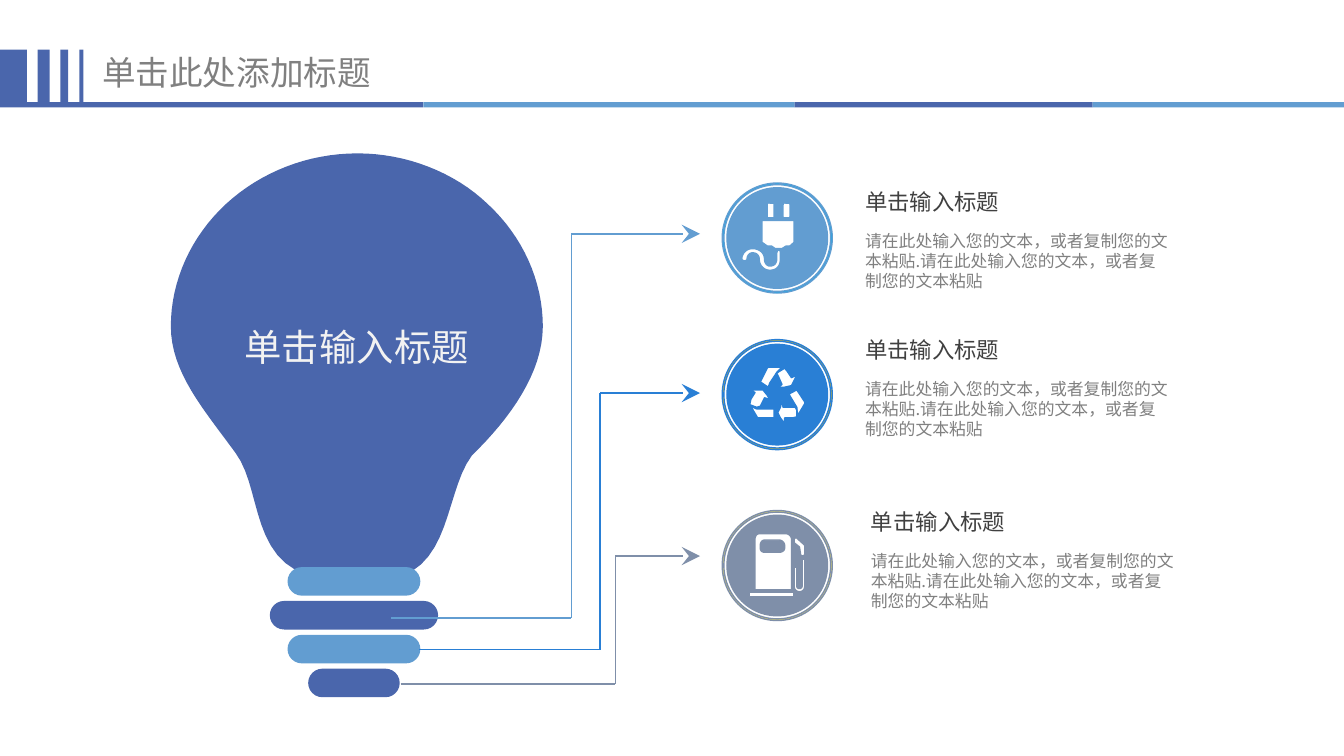
from lxml.etree import SubElement
from pptx import Presentation
from pptx.dml.color import RGBColor
from pptx.enum.shapes import MSO_CONNECTOR, MSO_SHAPE as Shape
from pptx.enum.text import MSO_ANCHOR, MSO_AUTO_SIZE, PP_ALIGN
from pptx.oxml.ns import qn
from pptx.util import Cm, Pt

INDIGO = RGBColor(0x4A, 0x66, 0xAC)
SKY = RGBColor(0x62, 0x9D, 0xD1)
BLUE = RGBColor(0x29, 0x7F, 0xD5)
SLATE = RGBColor(0x7F, 0x8F, 0xA9)
CYAN = RGBColor(0x00, 0xB0, 0xF0)
AMBER = RGBColor(0xFF, 0xC0, 0x00)
YELLOW = RGBColor(0xEA, 0xE0, 0x5E)
WHITE = RGBColor(0xFF, 0xFF, 0xFF)
PALE = RGBColor(0xF2, 0xF2, 0xF2)
GREY = RGBColor(0x80, 0x80, 0x80)
DARK = RGBColor(0x40, 0x40, 0x40)

HEADING = "单击输入标题"
BODY = "请在此处输入您的文本，或者复制您的文本粘贴.请在此处输入您的文本，或者复制您的文本粘贴"

# Outlines in cm: a pair is a corner, six numbers are a Bézier curve.
BULB = [[
    (3.23, 6.17), (3.23, 5.31, 3.61, 4.47, 4.27, 3.86),
    (4.93, 3.25, 5.82, 2.9, 6.76, 2.9), (7.67, 2.9, 8.59, 3.25, 9.22, 3.86),
    (9.88, 4.47, 10.26, 5.31, 10.26, 6.17), (10.26, 7.04, 9.65, 7.9, 8.92, 8.61),
    (8.33, 9.4, 8.59, 11.18, 6.78, 10.95), (4.6, 11.15, 5.05, 9.35, 4.45, 8.56),
    (3.86, 7.75, 3.23, 7.04, 3.23, 6.17)]]

# Icon outlines are measured from the centre of their badge.
PLUG_BODY = [[
    (-.29, -.33), (.32, -.33), (.32, .08), (.24, .15), (.17, .15),
    (.09, .2), (-.04, .2), (-.11, .15), (-.19, .15), (-.29, .08)]]
PLUG_CABLE = [[
    (.01, .23), (-.01, .28), (-.01, .4), (-.01, .48, -.06, .53, -.14, .53),
    (-.19, .53, -.24, .48, -.24, .4), (-.24, .28, -.34, .2, -.47, .2),
    (-.57, .2, -.67, .28, -.67, .4), (-.65, .44, -.58, .44, -.57, .4),
    (-.57, .33, -.52, .28, -.47, .28), (-.39, .28, -.34, .33, -.34, .4),
    (-.34, .53, -.24, .61, -.14, .61), (-.01, .61, .06, .53, .06, .4),
    (.06, .28), (.06, .25, .06, .23, .01, .23)]]
RECYCLE = [
    [(.32, -.27), (.27, -.17), (.14, -.14), (.01, -.14), (.09, -.19), (.01, -.37),
     (-.01, -.39), (.01, -.42), (.14, -.5), (.19, -.44), (.27, -.32), (.37, -.37)],
    [(.01, -.44), (.09, -.52), (-.17, -.52), (-.19, -.5), (-.32, -.24),
     (-.17, -.14), (-.14, -.22), (-.04, -.37), (-.01, -.42)],
    [(.14, .55), (.14, .44), (.29, .44), (.37, .42), (.37, .29), (.34, .24),
     (.11, .24), (.09, .11), (.06, .24), (.01, .34), (.06, .44)],
    [(.37, .29), (.39, .39), (.52, .17), (.52, .14), (.37, -.09), (.22, -.01),
     (.34, .19), (.37, .24)],
    [(-.52, -.09), (-.42, -.04), (-.5, .09), (-.52, .19), (-.39, .24),
     (-.32, .22), (-.24, .06), (-.14, .09), (-.19, .01), (-.27, -.09)],
    [(-.39, .27), (-.5, .22), (-.37, .44), (-.06, .44), (-.06, .27)]]
PUMP_NOZZLE = [[
    (.52, -.38), (.5, -.4), (.39, -.5), (.37, -.53, .34, -.53, .32, -.5),
    (.32, -.43), (.42, -.35), (.44, -.22), (.44, -.17, .52, -.17, .52, -.22)]]
PUMP_HOSE = [[
    (.47, -.12), (.47, .39), (.47, .45, .37, .45, .37, .39), (.37, .03),
    (.32, .03), (.32, .39), (.32, .53, .52, .53, .52, .39), (.52, -.12)]]
PUMP_BODY = [
    [(.17, -.6), (-.34, -.6), (-.39, -.6, -.42, -.55, -.42, -.5), (-.42, .46),
     (.27, .46), (.27, -.5), (.27, -.55, .22, -.6, .17, -.6)],
    [(-.32, -.38), (-.32, -.43, -.29, -.48, -.24, -.48), (.04, -.48),
     (.09, -.48, .14, -.43, .14, -.38), (.14, -.33),
     (.14, -.28, .09, -.25, .04, -.25), (-.24, -.25),
     (-.29, -.25, -.32, -.28, -.32, -.33)]]


def flatten(contour, steps=16):
    """Turn corners and Bézier curves into a list of points."""
    points = []
    for part in contour:
        if len(part) == 2:
            points.append(part)
            continue
        controls = [points[-1], part[:2], part[2:4], part[4:]]
        for step in range(1, steps + 1):
            t = step / steps
            weights = ((1 - t) ** 3, 3 * t * (1 - t) ** 2, 3 * t * t * (1 - t), t ** 3)
            points.append(tuple(
                sum(w * control[axis] for w, control in zip(weights, controls))
                for axis in (0, 1)))
    return points


class Painter:
    font = "Noto Sans CJK SC"
    hairline = Pt(0.75)

    def __init__(self, slide):
        self.shapes = slide.shapes

    def finish(self, shape, fill, line):
        shape.shadow.inherit = False
        shape.fill.solid()
        shape.fill.fore_color.rgb = fill
        if line is None:
            shape.line.fill.background()
        else:
            shape.line.color.rgb = line
            shape.line.width = self.hairline
        return shape

    def preset(self, kind, left, top, width, height, fill, line=None, adjust=None):
        shape = self.shapes.add_shape(kind, Cm(left), Cm(top), Cm(width), Cm(height))
        if adjust is not None:
            shape.adjustments[0] = adjust
        return self.finish(shape, fill, line)

    def outline(self, contours, fill, line=None, x=0, y=0):
        builder = None
        for contour in contours:
            start, *rest = [(Cm(x + px), Cm(y + py)) for px, py in flatten(contour)]
            if builder is None:
                builder = self.shapes.build_freeform(*start, scale=1.0)
            else:
                builder.move_to(*start)
            builder.add_line_segments(rest, close=True)
        return self.finish(builder.convert_to_shape(), fill, line)

    def line(self, x1, y1, x2, y2, color, arrow=False):
        line = self.shapes.add_connector(
            MSO_CONNECTOR.STRAIGHT, Cm(x1), Cm(y1), Cm(x2), Cm(y2))
        line.line.color.rgb = color
        line.line.width = self.hairline
        if arrow:
            SubElement(line.line._get_or_add_ln(), qn("a:tailEnd"),
                       type="stealth", w="lg", len="lg")
        SubElement(line._element.spPr, qn("a:effectLst"))

    def style(self, para, size, color):
        for span in para.runs:
            span.font.name = self.font
            span.font.size = Pt(size)
            span.font.color.rgb = color
            SubElement(span.font._element, qn("a:ea"), typeface=self.font)

    def text(self, left, top, width, height, lines):
        """Write lines of (text, size, colour), one paragraph each."""
        box = self.shapes.add_textbox(Cm(left), Cm(top), Cm(width), Cm(height))
        frame = box.text_frame
        frame.word_wrap = True
        frame.auto_size = MSO_AUTO_SIZE.SHAPE_TO_FIT_TEXT
        frame.margin_left = frame.margin_right = Cm(0.2)
        frame.margin_top = frame.margin_bottom = Cm(0.1)
        frame.text = "\n".join(line[0] for line in lines)
        for para, (_, size, color) in zip(frame.paragraphs, lines):
            self.style(para, size, color)
        return frame

    def block(self, left, top):
        heading, body = self.text(left, top, 6.2, 3.2, [
            (HEADING, 12, DARK), (BODY, 9, GREY)]).paragraphs
        heading.line_spacing = 1.2
        body.space_before = body.space_after = Pt(8.4)

    def leader(self, start, bottom, elbow, top, color):
        self.line(elbow, top, 13.23, top, color, arrow=True)
        self.line(start, bottom, elbow, bottom, color)
        self.line(elbow, top, elbow, bottom, color)

    def badge(self, x, y, color, ring, outlines, presets):
        self.preset(Shape.DONUT, x - 1.04, y - 1.04, 2.08, 2.08, ring, color, 0.015)
        self.preset(Shape.OVAL, x - 0.95, y - 0.95, 1.9, 1.9, color, color)
        for contours in outlines:
            self.outline(contours, WHITE, color, x, y)
        for kind, left, top, width, height in presets:
            self.preset(kind, x + left, y + top, width, height, WHITE, color)


def main():
    deck = Presentation()
    deck.slide_width, deck.slide_height = Cm(25.4), Cm(14.29)
    page = Painter(deck.slides.add_slide(deck.slide_layouts[6]))

    page.text(1.73, 0.89, 6.78, 0.97, [("单击此处添加标题", 18, GREY)])
    for left, width in ((0, 0.51), (0.71, 0.23), (1.14, 0.15), (1.5, 0.08)):
        page.preset(Shape.RECTANGLE, left, 0.94, width, 0.99, INDIGO)
    edges = (0, 8, 15.02, 20.65, 25.4)
    for i, (left, right) in enumerate(zip(edges, edges[1:])):
        page.preset(Shape.RECTANGLE, left, 1.93, right - left, 0.1, (INDIGO, SKY)[i % 2])

    bulb = page.outline(BULB, INDIGO)
    frame = bulb.text_frame
    frame.text = HEADING
    frame.vertical_anchor = MSO_ANCHOR.MIDDLE
    frame.margin_bottom = Cm(1.05)
    label = frame.paragraphs[0]
    label.alignment = PP_ALIGN.CENTER
    label.line_spacing = 1.2
    page.style(label, 20, PALE)
    for i, width in enumerate((2.51, 3.18, 2.51, 1.73)):
        page.preset(Shape.ROUNDED_RECTANGLE, 6.69 - width / 2, 10.72 + 0.64 * i,
                    width, 0.54, (SKY, INDIGO)[i % 2], adjust=0.5)

    prongs = [(Shape.ROUNDED_RECTANGLE, left, -0.66, 0.13, 0.28) for left in (-0.19, 0.11)]
    base = [(Shape.RECTANGLE, -0.52, 0.51, 0.84, 0.08)]
    topics = (
        (SKY, CYAN, 4.5, (7.39, 11.68, 10.8, 4.42), (16.15, 3.35),
         (PLUG_BODY, PLUG_CABLE), prongs),
        (BLUE, AMBER, 7.46, (7.92, 12.28, 11.34, 7.43), (16.15, 6.15), (RECYCLE,), ()),
        (SLATE, YELLOW, 10.69, (7.57, 12.93, 11.63, 10.51), (16.26, 9.4),
         (PUMP_NOZZLE, PUMP_HOSE, PUMP_BODY), base),
    )
    for color, ring, y, route, corner, outlines, presets in topics:
        page.leader(*route, color)
        page.badge(14.69, y, color, ring, outlines, presets)
        page.block(*corner)

    deck.save("out.pptx")


if __name__ == "__main__":
    main()
